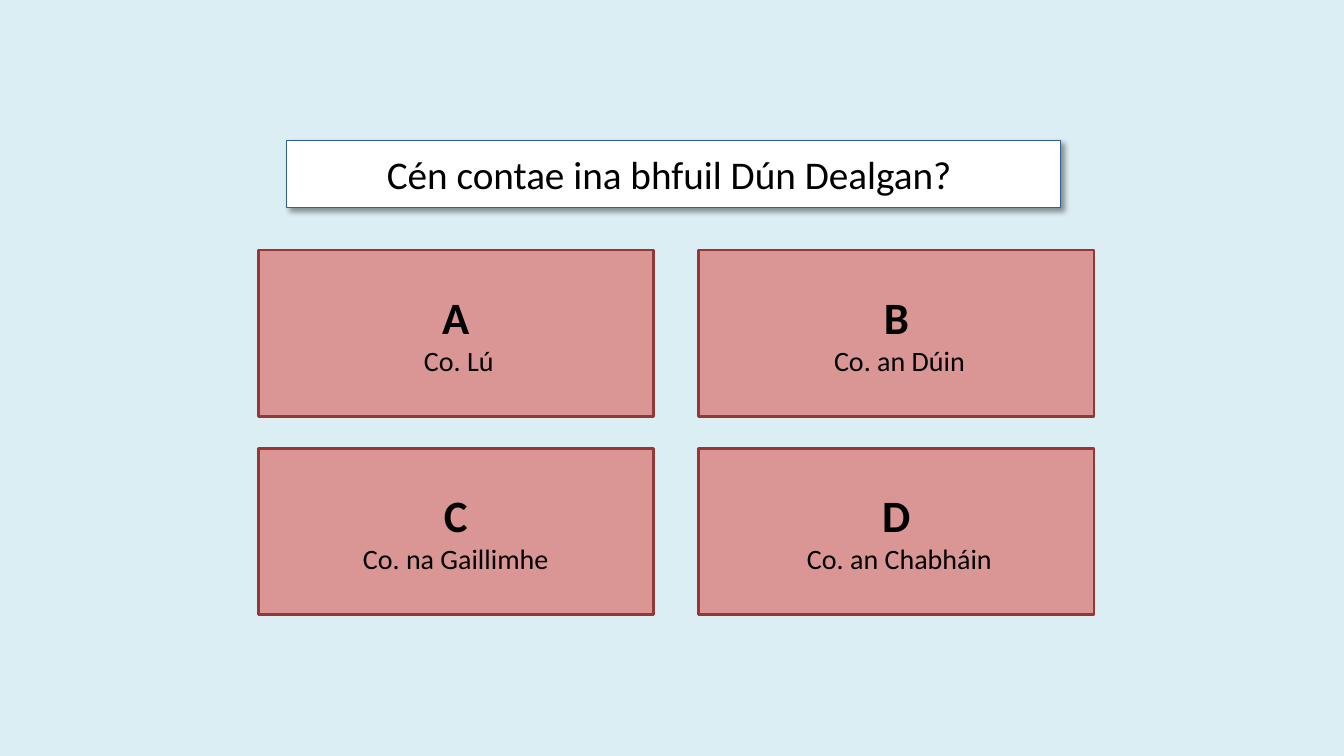
from lxml.etree import SubElement
from pptx import Presentation
from pptx.dml.color import RGBColor
from pptx.enum.shapes import MSO_SHAPE
from pptx.enum.text import MSO_ANCHOR, MSO_AUTO_SIZE, PP_ALIGN
from pptx.oxml.ns import qn
from pptx.util import Inches, Pt

# Content
QUERY = "Cén contae ina bhfuil Dún Dealgan? "
CHOICES = [
    ("A", " Co. Lú"),
    ("B", " Co. an Dúin"),
    ("C", "Co. na Gaillimhe"),
    ("D", " Co. an Chabháin"),
]

# Colours and font
SKY = RGBColor(0xDB, 0xEE, 0xF4)
ROSE = RGBColor(0xD9, 0x96, 0x94)
WINE = RGBColor(0x95, 0x37, 0x35)
NAVY = RGBColor(0x37, 0x60, 0x92)
WHITE = RGBColor(0xFF, 0xFF, 0xFF)
BLACK = RGBColor(0, 0, 0)
FONT = "Calibri"

# Grid of answers, in inches
COLS = 2
LEFT, TOP = 2.56, 2.48
WIDE, HIGH = 3.92, 1.65
STEP_X, STEP_Y = 4.37, 1.97


def paint(shape, fill, line, width):
    shape.fill.solid()
    shape.fill.fore_color.rgb = fill
    shape.line.color.rgb = line
    shape.line.width = Pt(width)


def style(para, size, bold=False):
    para.alignment = PP_ALIGN.CENTER
    for run in para.runs:
        font = run.font
        font.name, font.size, font.bold = FONT, Pt(size), bold
        font.color.rgb = BLACK


def add_shadow(shape):
    effects = SubElement(shape._element.spPr, qn("a:effectLst"))
    outer = SubElement(effects, qn("a:outerShdw"), blurRad=str(Pt(4)),
                       dist=str(Pt(3)), dir=str(45 * 60000),
                       algn="tl", rotWithShape="0")
    tint = SubElement(outer, qn("a:srgbClr"), val=str(BLACK))
    SubElement(tint, qn("a:alpha"), val="40000")


def add_query(slide):
    title = slide.shapes.title
    title.left, title.top = Inches(2.84), Inches(1.39)
    title.width, title.height = Inches(7.68), Inches(0.67)
    paint(title, WHITE, NAVY, 0.75)
    add_shadow(title)
    frame = title.text_frame
    frame.text = QUERY
    frame.word_wrap = True
    frame.auto_size = MSO_AUTO_SIZE.NONE
    frame.vertical_anchor = MSO_ANCHOR.MIDDLE
    para = frame.paragraphs[0]
    para.space_before = Pt(5.6)
    style(para, 28)


def add_choice(slide, index, letter, county):
    row, col = divmod(index, COLS)
    card = slide.shapes.add_shape(
        MSO_SHAPE.RECTANGLE,
        Inches(LEFT + col * STEP_X), Inches(TOP + row * STEP_Y),
        Inches(WIDE), Inches(HIGH))
    card.shadow.inherit = False
    paint(card, ROSE, WINE, 2)
    frame = card.text_frame
    frame.word_wrap = True
    frame.vertical_anchor = MSO_ANCHOR.MIDDLE
    frame.text = f"{letter}\n{county}"
    head, body = frame.paragraphs
    style(head, 32, bold=True)
    style(body, 20)


def main():
    deck = Presentation()
    deck.slide_width, deck.slide_height = Inches(13.33), Inches(7.5)
    slide = deck.slides.add_slide(deck.slide_layouts.get_by_name("Title Only"))
    slide.background.fill.solid()
    slide.background.fill.fore_color.rgb = SKY

    # Question above the four answers
    add_query(slide)
    for index, (letter, county) in enumerate(CHOICES):
        add_choice(slide, index, letter, county)
    deck.save("out.pptx")


if __name__ == "__main__":
    main()
